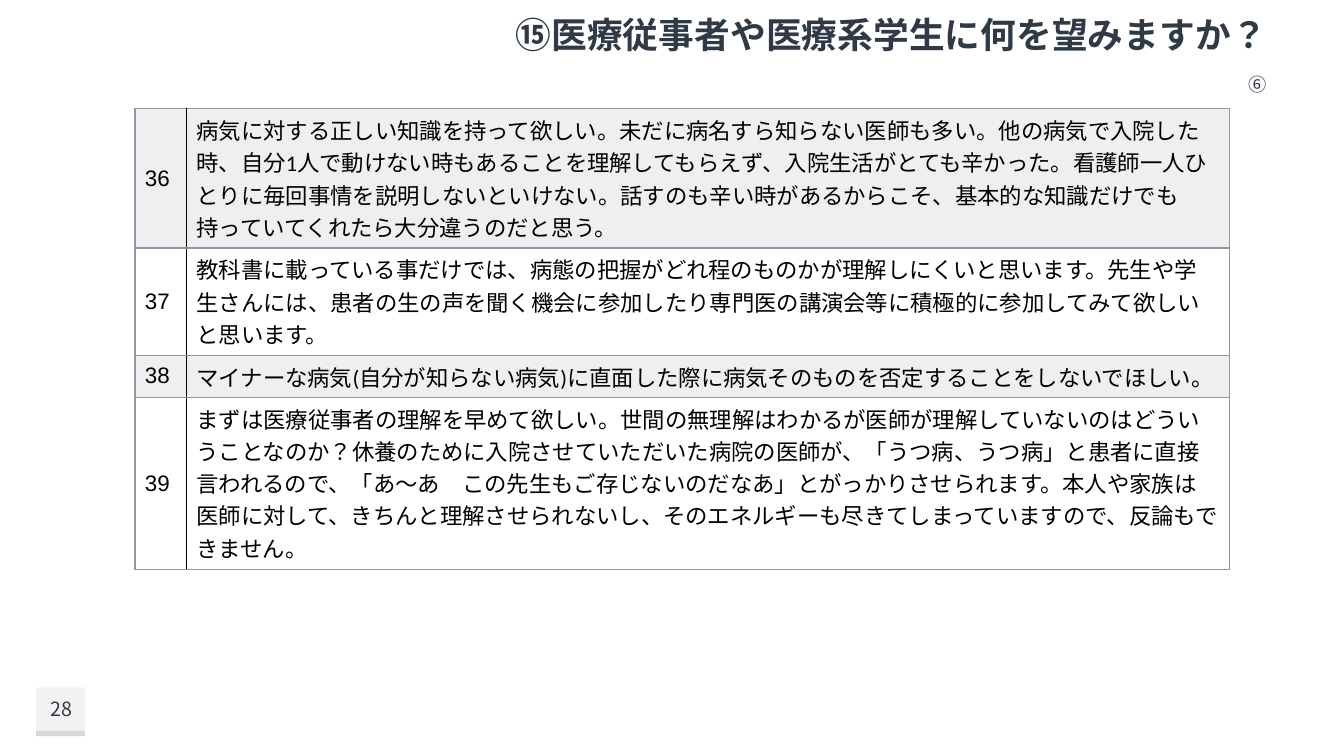
from dataclasses import dataclass

from lxml import etree
from pptx import Presentation
from pptx.dml import color
from pptx.enum import lang, shapes, text
from pptx.oxml import ns
from pptx import util as u


@dataclass(frozen=True)
class Theme:
    ink: str = "2F3A46"
    body: str = "000000"
    rule: str = "9D90A0"
    band: str = "EFEEF0"
    white: str = "FFFFFF"
    badge: str = "F2F2F2"
    badge_foot: str = "D9D9D9"
    japanese_font: str = "Noto Sans CJK JP"
    number_font: str = "Arial"
    opinion_font: str = "Calibri"
    title_size: float = 25.5
    subtitle_size: float = 13
    body_size: float = 16
    page_size: float = 14


@dataclass(frozen=True)
class Box:
    left: float
    top: float
    width: float
    height: float

    def lengths(self) -> list[u.Length]:
        return [u.Cm(value) for value in (self.left, self.top, self.width, self.height)]


@dataclass(frozen=True)
class Label:
    box: Box
    words: str
    size: float
    align: text.PP_ALIGN
    bold: bool = False


@dataclass(frozen=True)
class Opinion:
    number: str
    words: str
    height: float


THEME = Theme()

BADGE_PARTS = [
    (Box(0.91, 17.32, 1.23, 1.23), THEME.badge),
    (Box(0.91, 18.42, 1.23, 0.13), THEME.badge_foot),
]

LABELS = [
    Label(Box(5.54, 1.73, 26.64, 0.79), "⑥", THEME.subtitle_size, text.PP_ALIGN.RIGHT),
    Label(Box(5.54, 0, 26.64, 1.73), "⑮医療従事者や医療系学生に何を望みますか？",
          THEME.title_size, text.PP_ALIGN.RIGHT, bold=True),
    Label(Box(0.74, 17.32, 1.6, 1.09), "28", THEME.page_size, text.PP_ALIGN.CENTER),
]

TABLE_LEFT, TABLE_TOP = 3.4, 2.74
COLUMN_WIDTHS = (1.3, 26.29)
OPINIONS = [
    Opinion("36", "病気に対する正しい知識を持って欲しい。未だに病名すら知らない医師も多い。"
            "他の病気で入院した時、自分1人で動けない時もあることを理解してもらえず、"
            "入院生活がとても辛かった。看護師一人ひとりに毎回事情を説明しないといけない。"
            "話すのも辛い時があるからこそ、基本的な知識だけでも持っていてくれたら"
            "大分違うのだと思う。", 3.51),
    Opinion("37", "教科書に載っている事だけでは、病態の把握がどれ程のものかが理解しにくいと"
            "思います。先生や学生さんには、患者の生の声を聞く機会に参加したり"
            "専門医の講演会等に積極的に参加してみて欲しいと思います。", 2.7),
    Opinion("38", "マイナーな病気(自分が知らない病気)に直面した際に"
            "病気そのものを否定することをしないでほしい。", 1.06),
    Opinion("39", "まずは医療従事者の理解を早めて欲しい。世間の無理解はわかるが"
            "医師が理解していないのはどういうことなのか？休養のために入院させていただいた"
            "病院の医師が、「うつ病、うつ病」と患者に直接言われるので、"
            "「あ～あ　この先生もご存じないのだなあ」とがっかりさせられます。"
            "本人や家族は医師に対して、きちんと理解させられないし、"
            "そのエネルギーも尽きてしまっていますので、反論もできません。", 4.34),
]


def write(frame, words: str, *, size: float, font: str, ink: str,
          align: text.PP_ALIGN = text.PP_ALIGN.LEFT, bold: bool = False) -> None:
    """Put one formatted run of Japanese text in a text frame."""
    frame.word_wrap = True
    paragraph = frame.paragraphs[0]
    paragraph.alignment = align
    run = paragraph.add_run()
    run.text = words
    run.font.size = u.Pt(size)
    run.font.bold = bold
    run.font.color.rgb = color.RGBColor.from_string(ink)
    run.font.name = font
    run.font.language_id = lang.MSO_LANGUAGE_ID.JAPANESE
    east_asian = etree.SubElement(run.font._element, ns.qn("a:ea"))
    east_asian.set("typeface", THEME.japanese_font)


def add_block(slide, box: Box, fill: str) -> None:
    shape = slide.shapes.add_shape(shapes.MSO_SHAPE.RECTANGLE, *box.lengths())
    shape.shadow.inherit = False
    shape.fill.solid()
    shape.fill.fore_color.rgb = color.RGBColor.from_string(fill)
    shape.line.fill.background()


def add_label(slide, label: Label) -> None:
    frame = slide.shapes.add_textbox(*label.box.lengths()).text_frame
    frame.vertical_anchor = text.MSO_ANCHOR.MIDDLE
    write(frame, label.words, size=label.size, font=THEME.japanese_font,
          ink=THEME.ink, align=label.align, bold=label.bold)


def style_cell(cell, fill: str, left: str, right: str) -> None:
    """Draw the four one-point borders, then the fill that must follow them."""
    properties = cell._tc.get_or_add_tcPr()
    for side, ink in zip("LRTB", (left, right, THEME.rule, THEME.rule)):
        line = etree.SubElement(properties, ns.qn(f"a:ln{side}"), w=str(u.Pt(1)))
        solid = etree.SubElement(line, ns.qn("a:solidFill"))
        etree.SubElement(solid, ns.qn("a:srgbClr"), val=ink)
    cell.fill.solid()
    cell.fill.fore_color.rgb = color.RGBColor.from_string(fill)


def add_opinions(slide, opinions: list[Opinion]) -> None:
    box = Box(TABLE_LEFT, TABLE_TOP, sum(COLUMN_WIDTHS),
              sum(opinion.height for opinion in opinions))
    table = slide.shapes.add_table(len(opinions), 2, *box.lengths()).table
    table.first_row = False
    table.horz_banding = False
    for column, width in zip(table.columns, COLUMN_WIDTHS):
        column.width = u.Cm(width)
    for index, opinion in enumerate(opinions):
        table.rows[index].height = u.Cm(opinion.height)
        fill = THEME.white if index % 2 else THEME.band
        number, words = table.rows[index].cells
        style_cell(number, fill, THEME.rule, THEME.body)
        style_cell(words, fill, THEME.body, THEME.rule)
        number.vertical_anchor = text.MSO_ANCHOR.MIDDLE
        write(number.text_frame, opinion.number, size=THEME.body_size,
              font=THEME.number_font, ink=THEME.body)
        write(words.text_frame, opinion.words, size=THEME.body_size,
              font=THEME.opinion_font, ink=THEME.body)


def main() -> None:
    presentation = Presentation()
    presentation.slide_width = u.Cm(33.87)
    presentation.slide_height = u.Cm(19.05)
    slide = presentation.slides.add_slide(presentation.slide_layouts[6])

    # Page number badge
    for box, fill in BADGE_PARTS:
        add_block(slide, box, fill)

    # Heading, part number and page number
    for label in LABELS:
        add_label(slide, label)

    # Survey answers
    add_opinions(slide, OPINIONS)

    presentation.save("out.pptx")


if __name__ == "__main__":
    main()
